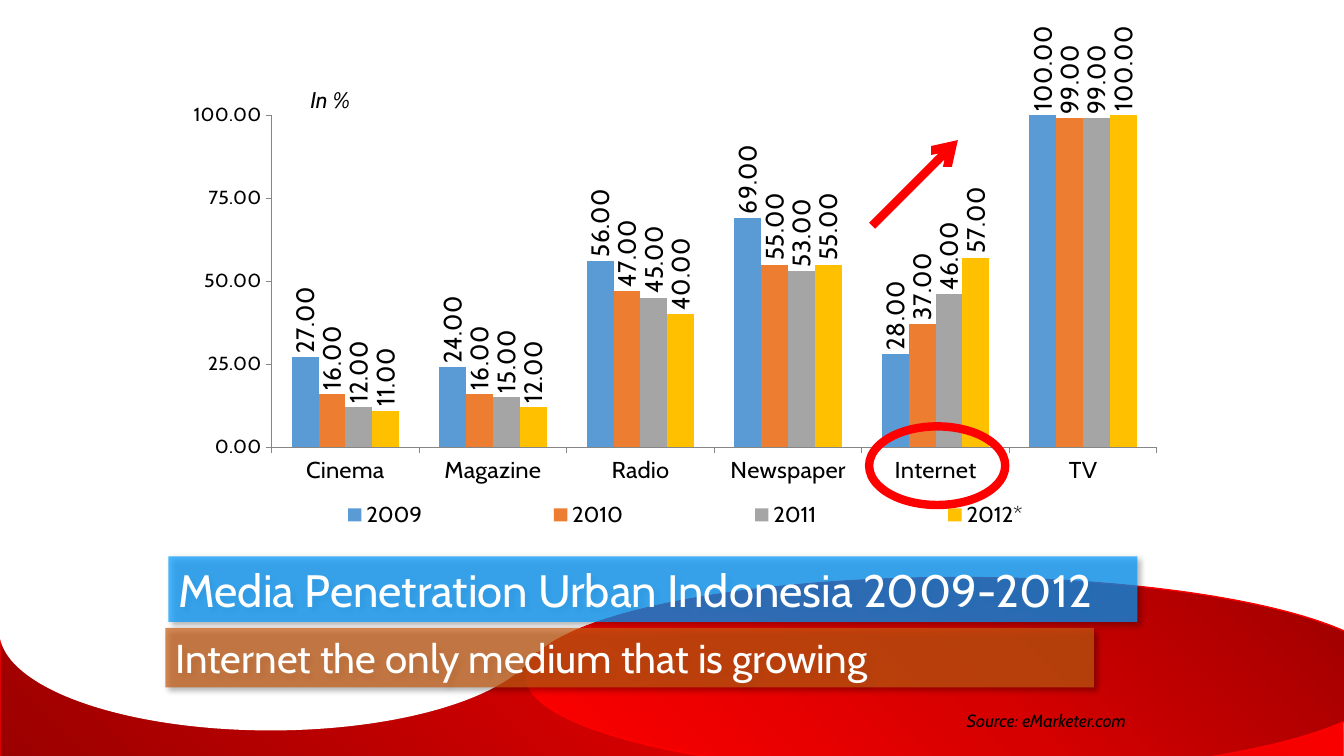
from lxml import etree
from pptx import Presentation
from pptx.chart.data import CategoryChartData
from pptx.dml.color import RGBColor
from pptx.enum.chart import XL_CHART_TYPE, XL_LABEL_POSITION, XL_LEGEND_POSITION, XL_TICK_LABEL_POSITION, XL_TICK_MARK
from pptx.enum.shapes import MSO_CONNECTOR, MSO_SHAPE
from pptx.enum.text import MSO_ANCHOR, MSO_AUTO_SIZE, PP_ALIGN
from pptx.oxml import parse_xml
from pptx.oxml.ns import nsdecls, qn
from pptx.util import Inches, Pt

FONT = "Cabin"
NUMBER_FORMAT = "#,##0.00"
BLACK = RGBColor(0x00, 0x00, 0x00)
WHITE = RGBColor(0xFF, 0xFF, 0xFF)
RED = RGBColor(0xFF, 0x00, 0x00)
GREY = RGBColor(0x86, 0x86, 0x86)
BANNER_BLUE = RGBColor(0x00, 0x99, 0xFF)
BANNER_ORANGE = RGBColor(0xC5, 0x5A, 0x11)

MEDIA = ["Cinema", "Magazine", "Radio", "Newspaper", "Internet", "TV"]
YEARS = [
    ("2009", (27, 24, 56, 69, 28, 100), RGBColor(0x5B, 0x9B, 0xD5)),
    ("2010", (16, 16, 47, 55, 37, 99), RGBColor(0xED, 0x7D, 0x31)),
    ("2011", (12, 15, 45, 53, 46, 99), RGBColor(0xA5, 0xA5, 0xA5)),
    ("2012*", (11, 12, 40, 55, 57, 100), RGBColor(0xFF, 0xC0, 0x00)),
]
TITLE = "Media Penetration Urban Indonesia 2009-2012"
SUBTITLE = "Internet the only medium that is growing"
NOTES = [
    ("In %", (2.98, 0.8, 0.7, 0.37), 16.2),
    ("Source: eMarketer.com", (9.49, 6.99, 2.03, 0.31), 12.6),
]
RADIAL = '<a:path path="circle"><a:fillToRect t="100000" r="100000"/></a:path>'
DIAGONAL = '<a:lin ang="8100000" scaled="0"/>'
WAVES = [
    (MSO_SHAPE.FLOWCHART_PUNCHED_TAPE, (0, 6.13, 13.32, 1.92), 180, RADIAL),
    (MSO_SHAPE.OVAL, (5.22, 5.73, 8.59, 1.96), 0, DIAGONAL),
    (MSO_SHAPE.OVAL, (0, 5.28, 5.37, 1.96), 0, None),
]


def box(lengths):
    return [Inches(length) for length in lengths]


def add_wave(slide, kind, place, rotation, shading):
    shape = slide.shapes.add_shape(kind, *box(place))
    shape.rotation = rotation
    shape.shadow.inherit = False
    shape.line.width = Pt(1)
    shape.line.color.rgb = RED if shading else WHITE
    shape.fill.solid()
    shape.fill.fore_color.rgb = WHITE
    if shading:
        stops = "".join(
            f'<a:gs pos="{position}"><a:srgbClr val="{color}"/></a:gs>'
            for position, color in ((0, "970000"), (50000, "D70000"), (100000, "FF0000"))
        )
        solid = shape._element.spPr.find(qn("a:solidFill"))
        solid.getparent().replace(solid, parse_xml(
            f'<a:gradFill {nsdecls("a")} rotWithShape="1"><a:gsLst>{stops}</a:gsLst>{shading}</a:gradFill>'))


def set_layout(parent, index, x, y, width, height, inner=False):
    for layout in parent.findall(qn("c:layout")):
        parent.remove(layout)
    target = '<c:layoutTarget val="inner"/>' if inner else ""
    parent.insert(index, parse_xml(
        f'<c:layout {nsdecls("c")}><c:manualLayout>{target}<c:xMode val="edge"/><c:yMode val="edge"/>'
        f'<c:x val="{x}"/><c:y val="{y}"/><c:w val="{width}"/><c:h val="{height}"/></c:manualLayout></c:layout>'))


def set_font(font, size, color, italic=False):
    font.name = FONT
    font.size = Pt(size)
    font.color.rgb = color
    font.bold = False
    font.italic = italic


def add_media_chart(slide):
    data = CategoryChartData(number_format=NUMBER_FORMAT)
    data.categories = MEDIA
    for year, values, _ in YEARS:
        data.add_series(year, values)
    chart = slide.shapes.add_chart(
        XL_CHART_TYPE.COLUMN_CLUSTERED, *box((1.92, 0.28, 9.56, 5.03)), data).chart
    chart.has_title = False
    set_font(chart.font, 18, BLACK)
    plot = chart.plots[0]
    plot.gap_width = 150
    plot.overlap = 0
    plot.vary_by_categories = False
    for series, (_, _, color) in zip(plot.series, YEARS):
        series.format.fill.solid()
        series.format.fill.fore_color.rgb = color
        labels = series.data_labels
        labels.show_value = True
        labels.position = XL_LABEL_POSITION.OUTSIDE_END
        labels.number_format = NUMBER_FORMAT
        labels.number_format_is_linked = False
        set_font(labels.font, 18, BLACK)
        body = labels._element.find(qn("c:txPr")).find(qn("a:bodyPr"))
        body.set("rot", "-5400000")
        body.set("vert", "horz")
    for axis, size in ((chart.category_axis, 17), (chart.value_axis, 14)):
        axis.has_major_gridlines = False
        axis.major_tick_mark = XL_TICK_MARK.OUTSIDE
        axis.format.line.color.rgb = GREY
        set_font(axis.tick_labels.font, size, BLACK)
    chart.category_axis.tick_label_position = XL_TICK_LABEL_POSITION.LOW
    value_axis = chart.value_axis
    value_axis.minimum_scale = 0
    value_axis.maximum_scale = 100
    value_axis.major_unit = 25
    value_axis.tick_labels.number_format = NUMBER_FORMAT
    value_axis.tick_labels.number_format_is_linked = False
    chart.has_legend = True
    legend = chart.legend
    legend.position = XL_LEGEND_POSITION.BOTTOM
    legend.include_in_layout = False
    set_font(legend.font, 16, BLACK)
    set_layout(legend._element, 1, 0.03, 0.94, 0.96, 0.06)
    set_layout(chart._chartSpace.chart.plotArea, 0, 0.08, 0.14, 0.92, 0.68, inner=True)


def style_banner(shape, text, place, size, color):
    shape.left, shape.top, shape.width, shape.height = box(place)
    shape.fill.solid()
    shape.fill.fore_color.rgb = color
    shape.line.fill.background()
    properties = shape._element.spPr
    tint = properties.find(qn("a:solidFill")).find(qn("a:srgbClr"))
    etree.SubElement(tint, qn("a:alpha")).set("val", "70000")
    properties.append(parse_xml(
        f'<a:effectLst {nsdecls("a")}><a:outerShdw blurRad="{Pt(4)}" dist="{Pt(3)}" dir="2700000" '
        'algn="tl" rotWithShape="0"><a:srgbClr val="000000"><a:alpha val="40000"/></a:srgbClr>'
        '</a:outerShdw></a:effectLst>'))
    frame = shape.text_frame
    frame.text = text
    frame.word_wrap = True
    frame.vertical_anchor = MSO_ANCHOR.MIDDLE
    paragraph = frame.paragraphs[0]
    paragraph.alignment = PP_ALIGN.LEFT
    paragraph.line_spacing = 1.0
    set_font(paragraph.font, size, WHITE)


def add_note(slide, text, place, size):
    frame = slide.shapes.add_textbox(*box(place)).text_frame
    frame.word_wrap = False
    frame.auto_size = MSO_AUTO_SIZE.SHAPE_TO_FIT_TEXT
    frame.text = text
    set_font(frame.paragraphs[0].font, size, BLACK, italic=True)


def add_internet_highlight(slide):
    arrow = slide.shapes.add_connector(MSO_CONNECTOR.STRAIGHT, *box((8.65, 2.24, 9.5, 1.39)))
    arrow.line.color.rgb = RED
    arrow.line.width = Pt(6)
    etree.SubElement(arrow.line._get_or_add_ln(), qn("a:tailEnd")).set("type", "arrow")
    etree.SubElement(arrow._element.spPr, qn("a:effectLst"))
    ring = slide.shapes.add_shape(MSO_SHAPE.OVAL, *box((8.62, 4.23, 1.35, 0.78)))
    ring.shadow.inherit = False
    ring.fill.background()
    ring.line.color.rgb = RED
    ring.line.width = Pt(6)


def main():
    presentation = Presentation()
    presentation.slide_width = Inches(13.33)
    presentation.slide_height = Inches(7.5)
    slide = presentation.slides.add_slide(presentation.slide_layouts[5])
    for wave in WAVES:
        add_wave(slide, *wave)
    add_media_chart(slide)
    title = slide.shapes.title
    slide.shapes._spTree.append(title._element)
    style_banner(title, TITLE, (1.67, 5.52, 9.61, 0.65), 32.4, BANNER_BLUE)
    place = (1.64, 6.23, 9.21, 0.59)
    subtitle = slide.shapes.add_shape(MSO_SHAPE.RECTANGLE, *box(place))
    style_banner(subtitle, SUBTITLE, place, 28.8, BANNER_ORANGE)
    for note in NOTES:
        add_note(slide, *note)
    add_internet_highlight(slide)
    presentation.save("out.pptx")


if __name__ == "__main__":
    main()
